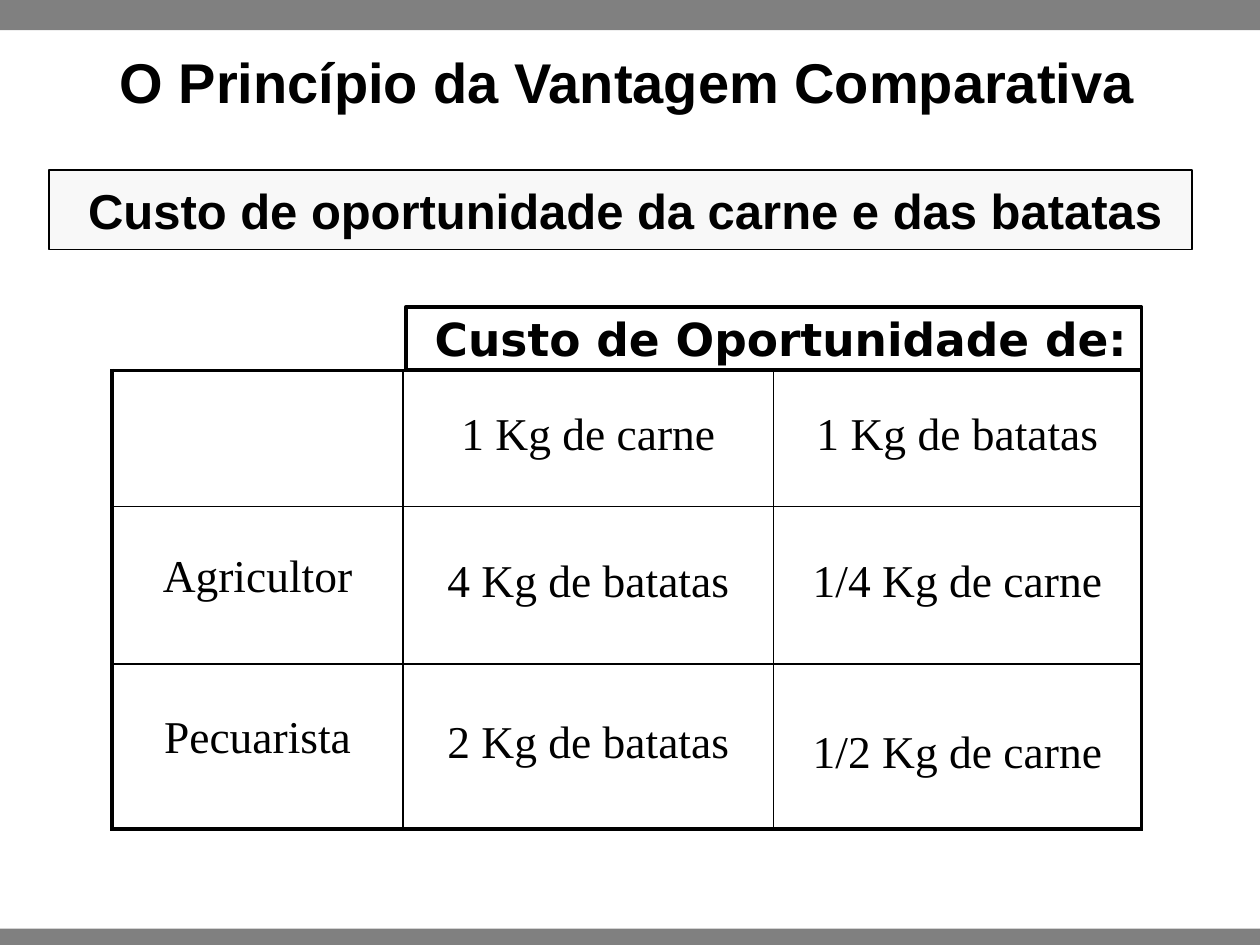
from lxml import etree
from pptx import Presentation
from pptx.dml.color import RGBColor
from pptx.enum.shapes import MSO_SHAPE as SHAPE
from pptx.enum.text import MSO_ANCHOR as ANCHOR, PP_ALIGN as ALIGN
from pptx.oxml.ns import qn
from pptx.util import Inches, Pt

BLACK, GRAY, PALE = "000000", "808080", "F8F8F8"
SANS, SERIF, HEADER = "Arial", "Times New Roman", "DejaVu Sans"
THIN, THICK = 1, 2.25


def rgb(value):
    return RGBColor.from_string(value)


class SlideBuilder:
    def __init__(self, slide):
        self.s = slide

    def set_text(self, tf, text, font, size, bold=False, align=ALIGN.LEFT):
        tf.text = text
        p = tf.paragraphs[0]
        p.alignment = align
        for r in p.runs:
            r.font.name, r.font.size, r.font.bold = font, Pt(size), bold
            r.font.color.rgb = rgb(BLACK)
        return p

    def rect(self, box, fill=None, line=None):
        sp = self.s.shapes.add_shape(SHAPE.RECTANGLE, *map(Inches, box))
        sp.shadow.inherit = False
        if fill:
            sp.fill.solid()
            sp.fill.fore_color.rgb = rgb(fill)
        else:
            sp.fill.background()
        if line:
            sp.line.color.rgb = rgb(BLACK)
            sp.line.width = Pt(line)
        else:
            sp.line.fill.background()
        return sp

    def banner(self, box, text, size, indent):
        tf = self.rect(box, PALE, THIN).text_frame
        tf.word_wrap = True
        tf.vertical_anchor = ANCHOR.MIDDLE
        tf.margin_left = Inches(indent)
        self.set_text(tf, text, SANS, size, bold=True)

    def label(self, box, text, font, size, align, left=0.1, top=0.05):
        tf = self.s.shapes.add_textbox(*map(Inches, box)).text_frame
        tf.word_wrap = True
        tf.margin_left, tf.margin_top = Inches(left), Inches(top)
        tf.margin_right = Inches(0.05 if align == ALIGN.LEFT else 0.1)
        self.set_text(tf, text, font, size, True, align)

    def borders(self, cell, widths):
        tc_pr = cell._tc.get_or_add_tcPr()
        for i, (side, width) in enumerate(zip("LRTB", widths)):
            ln = etree.Element(qn(f"a:ln{side}"), w=str(Pt(width)))
            fill = etree.SubElement(ln, qn("a:solidFill"))
            etree.SubElement(fill, qn("a:srgbClr"), val=BLACK)
            tc_pr.insert(i, ln)

    def table(self, box, col_widths, row_heights, rows):
        n_rows, n_cols = len(rows), len(col_widths)
        tbl = self.s.shapes.add_table(n_rows, n_cols, *map(Inches, box)).table
        tbl.first_row = tbl.horz_banding = False
        for col, width in zip(tbl.columns, col_widths):
            col.width = Inches(width)
        for row, height in zip(tbl.rows, row_heights):
            row.height = Inches(height)
        for i, texts in enumerate(rows):
            for j, text in enumerate(texts):
                cell = tbl.cell(i, j)
                cell.fill.background()
                cell.vertical_anchor = ANCHOR.MIDDLE
                p = self.set_text(cell.text_frame, text, SERIF, 26, align=ALIGN.CENTER)
                p.line_spacing = 0.8 if j else 0.45
                p.space_before = Pt(5.2)
                # Thick outline, thin inner rules
                outer = (j == 0, j == n_cols - 1, i == 0, i == n_rows - 1)
                self.borders(cell, [THICK if edge else THIN for edge in outer])
        return tbl


def main():
    prs = Presentation()
    prs.slide_width, prs.slide_height = Inches(10), Inches(7.5)
    b = SlideBuilder(prs.slides.add_slide(prs.slide_layouts[6]))

    # Gray bands
    b.rect((0, 7.37, 10, 0.15), GRAY)
    b.rect((-0.01, -0.01, 10.01, 0.25), GRAY)

    # Subtitle
    b.banner((0.39, 1.35, 9.07, 0.63),
             "Custo de oportunidade da carne e das batatas", 28, 0.31)

    # Opportunity cost table
    tbl = b.table((0.89, 2.94, 8.17, 3.65), (2.31, 2.94, 2.92), (1.08, 1.25, 1.31), [
        ("", "1 Kg de carne", "1 Kg de batatas"),
        ("Agricultor", "4 Kg de batatas", "1/4 Kg de carne"),
        ("Pecuarista", "2 Kg de batatas", "1/2 Kg de carne"),
    ])
    tbl.cell(2, 2).margin_top = Inches(0.21)  # the last value sits lower

    # Table header
    b.label((3.14, 2.4, 5.92, 0.54), "Custo de Oportunidade de:",
            HEADER, 26, ALIGN.LEFT, left=0.31, top=0.07)
    b.rect((3.22, 2.44, 5.84, 0.5), line=THICK)

    # Title
    b.label((-1.11, 0.28, 12.18, 0.64), "O Princípio da Vantagem Comparativa",
            SANS, 32, ALIGN.CENTER, top=0.1)

    prs.save("out.pptx")


if __name__ == "__main__":
    main()
